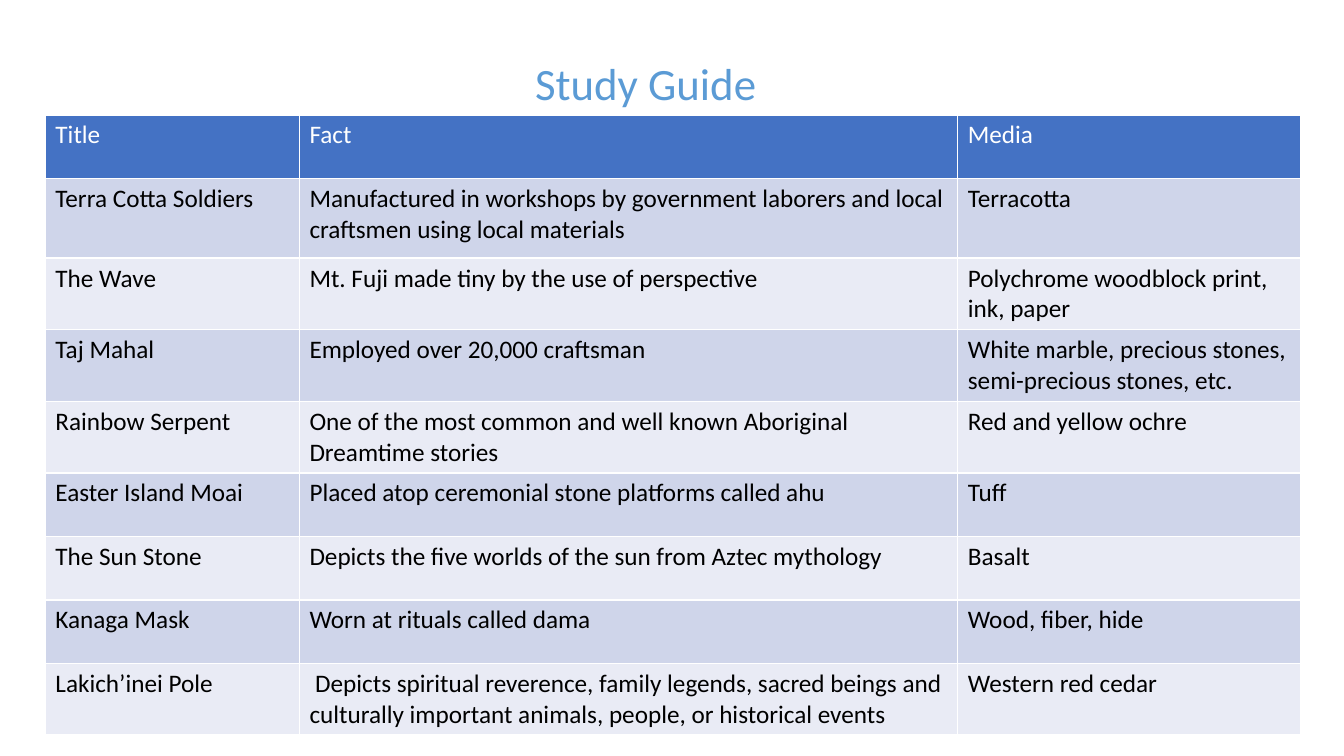
from pptx import Presentation
from pptx.dml.color import RGBColor as RGB
from pptx.enum.text import MSO_AUTO_SIZE as Fit, PP_ALIGN as Align
from pptx.util import Inches, Pt

COLORS = {
    "title": "5B9BD5",
    "head": "4472C4",
    "odd": "CFD5EA",
    "even": "E9EBF5",
    "light": "FFFFFF",
    "dark": "000000",
}
FONT = "Calibri"
WIDTHS = [2.52, 6.53, 3.4]
HEIGHTS = [0.63, 0.79, 0.63, 0.65, 0.63, 0.63, 0.63, 0.63, 0.65]
ROWS = [
    ("Title", "Fact", "Media"),
    ("Terra Cotta Soldiers",
     "Manufactured in workshops by government laborers and local craftsmen using local materials",
     "Terracotta"),
    ("The Wave", "Mt. Fuji made tiny by the use of perspective",
     "Polychrome woodblock print, ink, paper"),
    ("Taj Mahal", "Employed over 20,000 craftsman",
     "White marble, precious stones, semi-precious stones, etc."),
    ("Rainbow Serpent",
     "One of the most common and well known Aboriginal Dreamtime stories",
     "Red and yellow ochre"),
    ("Easter Island Moai", "Placed atop ceremonial stone platforms called ahu", "Tuff"),
    ("The Sun Stone", "Depicts the five worlds of the sun from Aztec mythology", "Basalt"),
    ("Kanaga Mask", "Worn at rituals called dama", "Wood, fiber, hide"),
    ("Lakich’inei Pole",
     " Depicts spiritual reverence, family legends, sacred beings and culturally "
     "important animals, people, or historical events",
     "Western red cedar"),
]


def style(para, size, color):
    """Set the font of a paragraph."""
    font = para.font
    font.name, font.size, font.bold = FONT, Pt(size), False
    font.color.rgb = RGB.from_string(COLORS[color])


def add_title(slide, text, left, top, width, height):
    """Place the centred heading in the given box."""
    box = slide.shapes.add_textbox(*map(Inches, (left, top, width, height)))
    frame = box.text_frame
    frame.word_wrap = True
    frame.auto_size = Fit.SHAPE_TO_FIT_TEXT
    para = frame.paragraphs[0]
    para.text = text
    para.alignment = Align.CENTER
    style(para, 32, "title")


def add_guide(slide, left, top, width, height):
    """Place the banded study table in the given box."""
    box = map(Inches, (left, top, width, height))
    table = slide.shapes.add_table(len(ROWS), len(WIDTHS), *box).table
    for col, size in zip(table.columns, WIDTHS):
        col.width = Inches(width * size / sum(WIDTHS))
    for i, (row, size, texts) in enumerate(zip(table.rows, HEIGHTS, ROWS)):
        row.height = Inches(size)
        band = "head" if i == 0 else "odd" if i % 2 else "even"
        for cell, text in zip(row.cells, texts):
            cell.text = text
            cell.fill.solid()
            cell.fill.fore_color.rgb = RGB.from_string(COLORS[band])
            style(cell.text_frame.paragraphs[0], 18, "dark" if i else "light")


def main():
    """Build and save the study guide."""
    deck = Presentation()
    deck.slide_width, deck.slide_height = Inches(13.33), Inches(7.5)
    slide = deck.slides.add_slide(deck.slide_layouts[6])
    add_guide(slide, 0.45, 1.14, 12.45, sum(HEIGHTS))
    add_title(slide, "Study Guide", 2.77, 0.5, 7.27, 0.64)
    deck.save("out.pptx")


if __name__ == "__main__":
    main()
